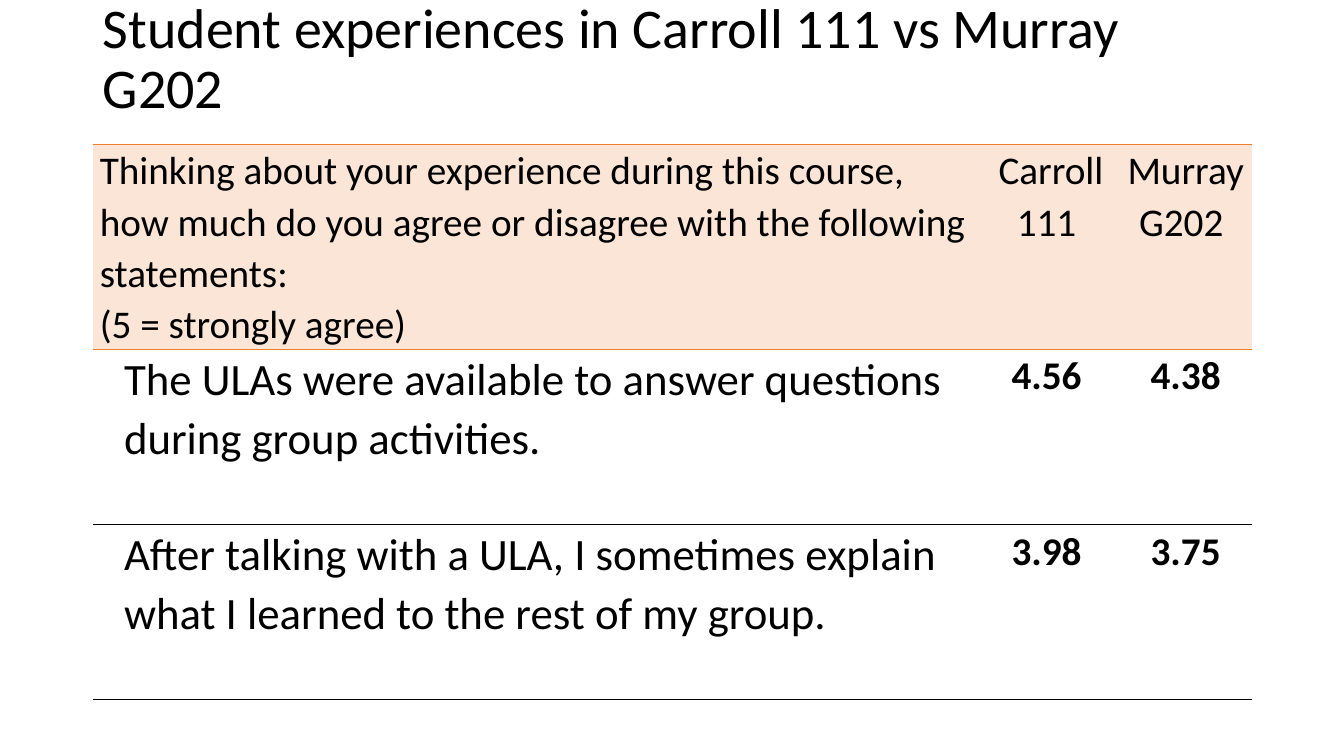
"""Build the slide comparing student experiences in two classrooms."""
import pptx
import pptx.dml.color
import pptx.enum.text
import pptx.oxml
import pptx.oxml.ns
import pptx.util

Inches = pptx.util.Inches
Pt = pptx.util.Pt
RGBColor = pptx.dml.color.RGBColor
PP_ALIGN = pptx.enum.text.PP_ALIGN

BLACK = RGBColor(0x00, 0x00, 0x00)
ORANGE = RGBColor(0xED, 0x7D, 0x31)
PEACH = RGBColor(0xFB, 0xE5, 0xD6)
FONT = "Calibri"
PLAIN_STYLE = "{2D5ABB26-0587-4C30-8999-92F81FD0307C}"

TITLE = "Student experiences in Carroll 111 vs Murray G202"
ROWS = [
    ("Thinking about your experience during this course, how much do you agree "
     "or disagree with the following statements: \n(5 = strongly agree)",
     " Carroll 111", "Murray G202 "),
    ("The ULAs were available to answer questions during group activities.",
     "4.56", "4.38"),
    ("After talking with a ULA, I sometimes explain what I learned to the rest "
     "of my group.", "3.98", "3.75"),
]
COLUMN_WIDTHS = (8.74, 1.44, 1.32)
ROW_HEIGHTS = (2.03, 1.74, 1.74)


def format_paragraph(p, size, spacing, bold=False):
    """Set the line spacing and the font of every run."""
    p.line_spacing = spacing
    for r in p.runs:
        r.font.name = FONT
        r.font.size = Pt(size)
        r.font.bold = bold
        r.font.color.rgb = BLACK


def add_title(s):
    """Place and format the title placeholder."""
    sp = s.shapes.title
    sp.left, sp.top = Inches(0.92), Inches(0.4)
    sp.width, sp.height = Inches(11.5), Inches(0.85)
    tf = sp.text_frame
    tf.text = TITLE
    tf.word_wrap = True
    tf.auto_size = pptx.enum.text.MSO_AUTO_SIZE.NONE
    tf.vertical_anchor = pptx.enum.text.MSO_ANCHOR.BOTTOM
    p = tf.paragraphs[0]
    p.alignment = PP_ALIGN.LEFT
    format_paragraph(p, 40, 0.9)


def set_borders(cell, color, sides):
    """Draw one-point borders on the given sides, T before B."""
    tc_pr = cell._tc.get_or_add_tcPr()
    for i, side in enumerate(sides):
        tc_pr.insert(i, pptx.oxml.parse_xml(
            f'<a:ln{side} {pptx.oxml.ns.nsdecls("a")} w="{Pt(1)}"><a:solidFill>'
            f'<a:srgbClr val="{color}"/></a:solidFill></a:ln{side}>'))


def fill_cell(cell, text, is_header, is_statement):
    """Write one table cell and give it its look."""
    cell.margin_left = cell.margin_right = Inches(0.07)
    cell.margin_top = cell.margin_bottom = 0
    p = cell.text_frame.paragraphs[0]
    p.text = text
    p.alignment = PP_ALIGN.LEFT if is_statement else PP_ALIGN.CENTER
    if is_statement and not is_header:
        p._p.get_or_add_pPr().set("marL", str(Inches(0.24)))
    size = 32 if is_statement and not is_header else 28
    format_paragraph(p, size, 1.07, not is_header and not is_statement)
    if is_header:
        cell.fill.solid()
        cell.fill.fore_color.rgb = PEACH
        set_borders(cell, ORANGE, "TB")
    else:
        cell.fill.background()
        set_borders(cell, BLACK, "B")


def add_survey_table(s):
    """Add the table of statements and mean scores."""
    frame = s.shapes.add_table(
        len(ROWS), len(COLUMN_WIDTHS), Inches(0.92), Inches(1.43),
        Inches(sum(COLUMN_WIDTHS)), Inches(sum(ROW_HEIGHTS)))
    table = frame.table
    table.first_row = table.horz_banding = False
    style = table._tbl.tblPr.find(pptx.oxml.ns.qn("a:tableStyleId"))
    style.text = PLAIN_STYLE
    for column, width in zip(table.columns, COLUMN_WIDTHS):
        column.width = Inches(width)
    for row, height in zip(table.rows, ROW_HEIGHTS):
        row.height = Inches(height)
    for i, texts in enumerate(ROWS):
        for j, text in enumerate(texts):
            fill_cell(table.cell(i, j), text, i == 0, j == 0)


def main():
    """Create the presentation and save it."""
    prs = pptx.Presentation()
    prs.slide_width, prs.slide_height = Inches(13.33), Inches(7.5)
    s = prs.slides.add_slide(prs.slide_layouts[5])
    add_title(s)
    add_survey_table(s)
    prs.save("out.pptx")


if __name__ == "__main__":
    main()
